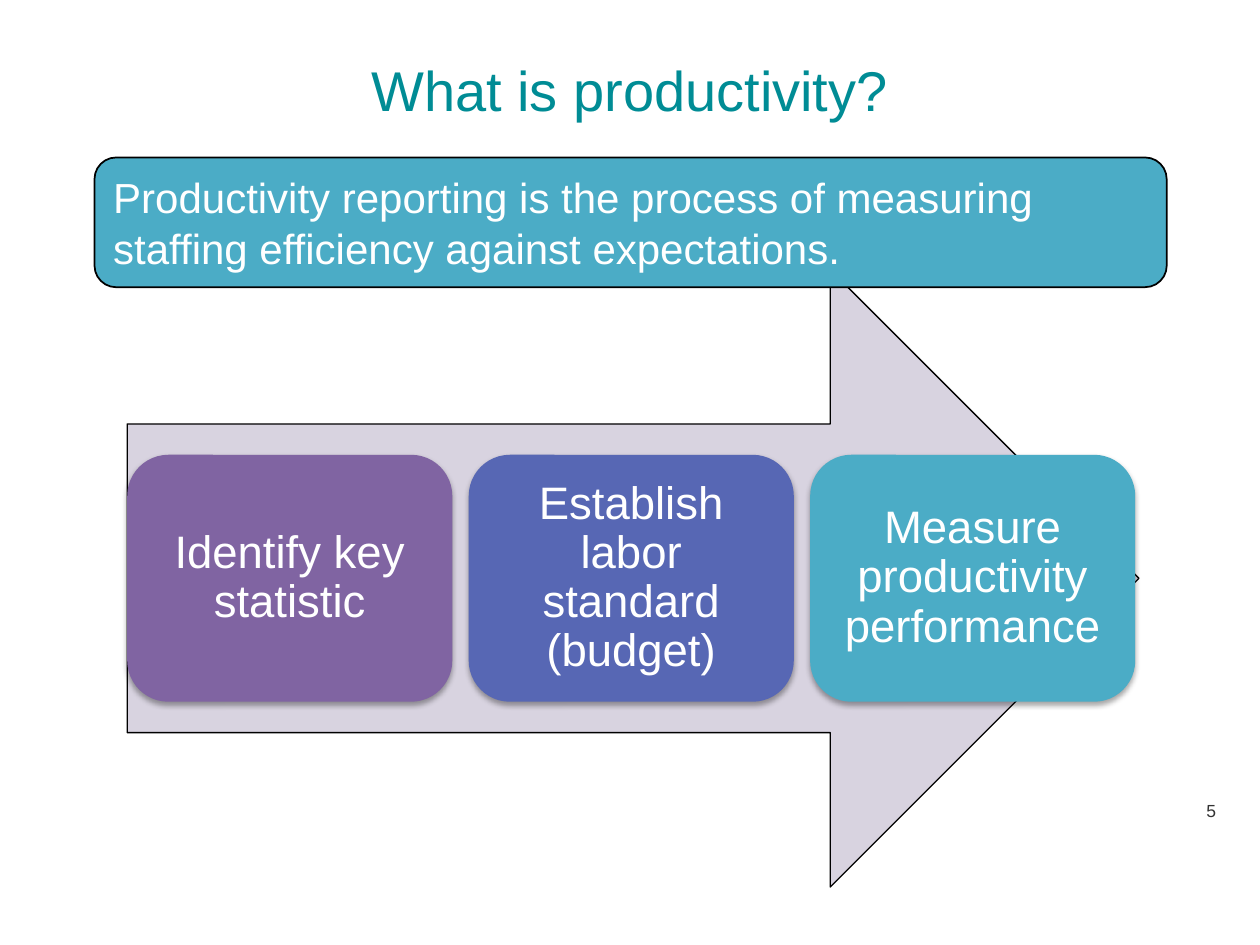
from lxml.etree import SubElement
from pptx import Presentation
from pptx.dml.color import RGBColor
from pptx.enum.shapes import MSO_SHAPE as Shape
from pptx.enum.text import MSO_ANCHOR as Anchor, PP_ALIGN as Align
from pptx.oxml.ns import qn
from pptx.util import Inches, Pt

TITLE = "What is productivity?"
BANNER = ("Productivity reporting is the process of measuring "
          "staffing efficiency against expectations.")
STEPS = [
    ("Identify key statistic", "8064A2"),
    ("Establish labor standard (budget)", "5767B4"),
    ("Measure productivity performance", "4BACC6"),
]
PAGE = "5"
LEFT, TOP, WIDE, HIGH, PITCH = 1.01, 3.61, 2.58, 1.96, 2.71


def color(code):
    return RGBColor.from_string(code)


def write(shape, text, size, code, align, pad=(0.1, 0.05)):
    frame = shape.text_frame
    frame.word_wrap = True
    frame.vertical_anchor = Anchor.MIDDLE
    frame.margin_left = frame.margin_right = Inches(pad[0])
    frame.margin_top = frame.margin_bottom = Inches(pad[1])
    para = frame.paragraphs[0]
    para.text = text
    para.alignment = align
    para.font.name = "Arial"
    para.font.size = Pt(size)
    para.font.color.rgb = color(code)
    return para


def label(slide, box, *style):
    write(slide.shapes.add_textbox(*map(Inches, box)), *style)


def block(slide, kind, box, fill, line=None):
    shape = slide.shapes.add_shape(kind, *map(Inches, box))
    shape.shadow.inherit = False
    shape.fill.solid()
    shape.fill.fore_color.rgb = color(fill)
    if line:
        shape.line.color.rgb = color("000000")
        shape.line.width = Pt(line)
    else:
        shape.line.fill.background()
    return shape


def shade(shape):
    """Add a soft shadow just below the shape."""
    effects = shape.element.spPr.find(qn("a:effectLst"))
    outer = SubElement(effects, qn("a:outerShdw"), blurRad=str(Pt(3.1)),
                       dist=str(Pt(1.8)), dir="5400000", rotWithShape="0")
    black = SubElement(outer, qn("a:srgbClr"), val="000000")
    SubElement(black, qn("a:alpha"), val="35000")


def main():
    deck = Presentation()
    deck.slide_width, deck.slide_height = Inches(10), Inches(7.5)
    slide = deck.slides.add_slide(deck.slide_layouts[6])

    label(slide, (8.58, 6.32, 1.17, 0.23), PAGE, 10, "333333", Align.RIGHT)
    label(slide, (0.5, 0.33, 9, 0.75), TITLE, 32, "008C95", Align.CENTER)
    block(slide, Shape.RIGHT_ARROW, (LEFT, 2.14, 8.03, 4.9), "D8D3E0", 0.75)

    for i, (text, fill) in enumerate(STEPS):
        box = (LEFT + i * PITCH, TOP, WIDE, HIGH)
        step = block(slide, Shape.ROUNDED_RECTANGLE, box, fill)
        shade(step)
        para = write(step, text, 26, "FFFFFF", Align.CENTER, (0.11, 0.11))
        para.line_spacing = 0.9

    banner = block(slide, Shape.ROUNDED_RECTANGLE, (0.75, 1.25, 8.51, 1.03),
                   "4BACC6", 1)
    write(banner, BANNER, 24, "FFFFFF", Align.LEFT)
    deck.save("out.pptx")


if __name__ == "__main__":
    main()
